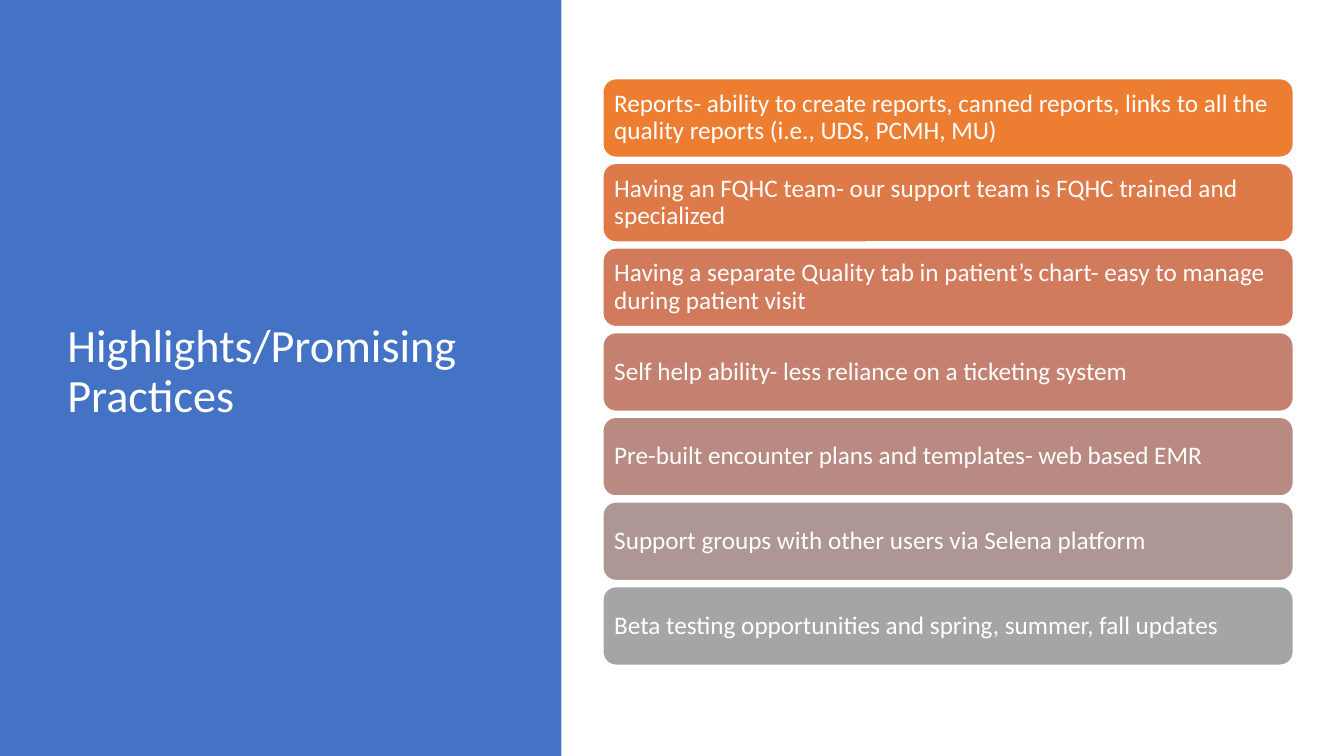
from dataclasses import dataclass

from pptx import Presentation
from pptx.dml.color import RGBColor
from pptx.enum.shapes import MSO_SHAPE
from pptx.enum.text import MSO_ANCHOR, PP_ALIGN
from pptx.util import Pt


@dataclass(frozen=True)
class Theme:
    """Colours and type sizes of the slide."""
    font: str = "Calibri"
    title_size: float = 33
    body_size: float = 18
    light: str = "FFFFFF"
    panel: str = "4472C4"
    bars: tuple = ("ED7D31", "DE7A47", "D17B5C", "C48170", "B98A82", "AE9694", "A5A5A5")


@dataclass(frozen=True)
class Box:
    """A rectangle in points."""
    left: float
    top: float
    width: float
    height: float

    def lengths(self):
        """Return the four sides as slide lengths."""
        return Pt(self.left), Pt(self.top), Pt(self.width), Pt(self.height)


THEME = Theme()
TITLE = "Highlights/Promising Practices"
PRACTICES = (
    "Reports- ability to create reports, canned reports, links to all the quality reports (i.e., UDS, PCMH, MU)",
    "Having an FQHC team- our support team is FQHC trained and specialized",
    "Having a separate Quality tab in patient’s chart- easy to manage during patient visit",
    "Self help ability- less reliance on a ticketing system",
    "Pre-built encounter plans and templates- web based EMR",
    "Support groups with other users via Selena platform",
    "Beta testing opportunities and spring, summer, fall updates",
)


def add_block(slide, kind, box, color):
    """Add a filled shape without outline or shadow."""
    shape = slide.shapes.add_shape(kind, *box.lengths())
    shape.shadow.inherit = False
    shape.fill.solid()
    shape.fill.fore_color.rgb = RGBColor.from_string(color)
    shape.line.fill.background()
    return shape


def write_text(shape, text, size, inset_x, inset_y):
    """Write one left-aligned, vertically centred paragraph."""
    frame = shape.text_frame
    frame.word_wrap = True
    frame.vertical_anchor = MSO_ANCHOR.MIDDLE
    frame.margin_left = frame.margin_right = Pt(inset_x)
    frame.margin_top = frame.margin_bottom = Pt(inset_y)
    paragraph = frame.paragraphs[0]
    paragraph.alignment = PP_ALIGN.LEFT
    paragraph.line_spacing = 0.9
    run = paragraph.add_run()
    run.text = text
    run.font.name = THEME.font
    run.font.size = Pt(size)
    run.font.color.rgb = RGBColor.from_string(THEME.light)


def add_title_panel(slide, box):
    """Draw the coloured panel with the slide title."""
    add_block(slide, MSO_SHAPE.RECTANGLE, box, THEME.panel)
    title_box = Box(box.left + 41, box.top + 49, box.width - 101.5, box.height - 106.5)
    title = slide.shapes.add_textbox(*title_box.lengths())
    write_text(title, TITLE, THEME.title_size, 7.2, 3.6)


def add_practice_list(slide, box, gap):
    """Stack one rounded bar per practice with equal gaps."""
    height = (box.height - gap * (len(PRACTICES) - 1)) / len(PRACTICES)
    for index, (practice, color) in enumerate(zip(PRACTICES, THEME.bars)):
        bar_box = Box(box.left, box.top + index * (height + gap), box.width, height)
        bar = add_block(slide, MSO_SHAPE.ROUNDED_RECTANGLE, bar_box, color)
        bar.line.color.rgb = RGBColor.from_string(THEME.light)
        bar.line.width = Pt(1)
        write_text(bar, practice, THEME.body_size, 5.4, 5.4)


def main():
    """Build and save the presentation."""
    presentation = Presentation()
    presentation.slide_width = Pt(960)
    presentation.slide_height = Pt(540)
    slide = presentation.slides.add_slide(presentation.slide_layouts[6])
    add_title_panel(slide, Box(0, 0, 401, 540))
    add_practice_list(slide, Box(430.6, 56.2, 493.2, 419), 4.3)
    presentation.save("out.pptx")


if __name__ == "__main__":
    main()
